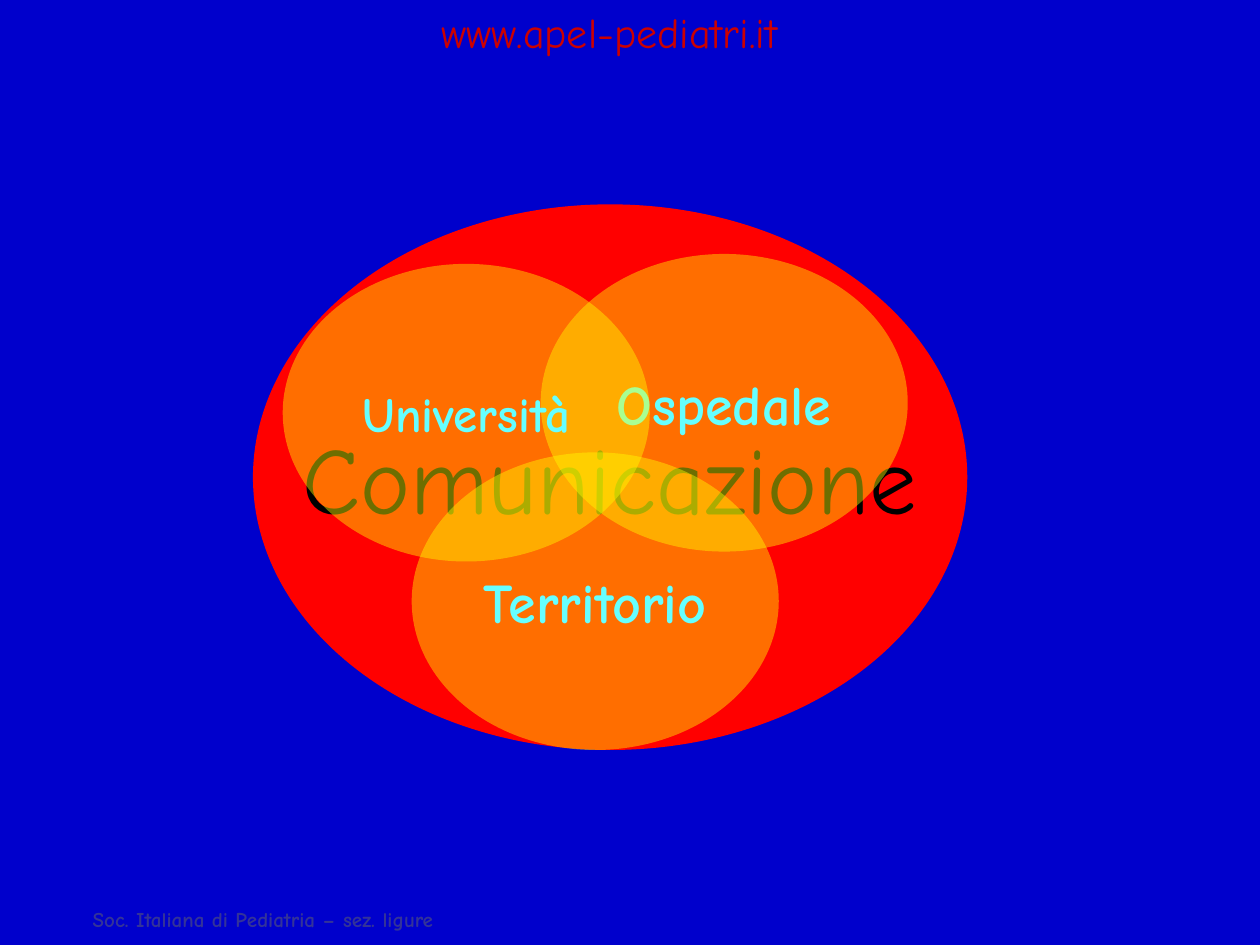
from dataclasses import dataclass

from lxml import etree
from pptx import Presentation
from pptx.dml.color import RGBColor
from pptx.enum import shapes, text
from pptx.oxml import ns
from pptx.util import Cm, Pt

BLUE = RGBColor(0x00, 0x00, 0xCC)
RED = RGBColor(0xFF, 0x00, 0x00)
DARK_RED = RGBColor(0xCC, 0x00, 0x00)
YELLOW = RGBColor(0xFF, 0xFF, 0x00)
CYAN = RGBColor(0x66, 0xFF, 0xFF)
INDIGO = RGBColor(0x33, 0x33, 0x99)
BLACK = RGBColor(0x00, 0x00, 0x00)
FONT = "Comic Neue"
CIRCLE_W, CIRCLE_H = 7.4, 6.0


@dataclass
class Ellipse:
    label: str
    left: float
    top: float
    size: int
    width: float = CIRCLE_W
    height: float = CIRCLE_H
    fill: RGBColor = YELLOW
    color: RGBColor = CYAN
    bold: bool = True
    opacity: int = 43


ELLIPSES = [
    Ellipse("Comunicazione", 5.1, 4.12, 54, 14.4, 11.0, RED, BLACK, False, 100),
    Ellipse("Ospedale", 10.9, 5.12, 32),
    Ellipse("Territorio", 8.3, 9.12, 32),
    Ellipse("Università", 5.7, 5.32, 28),
]


def write(tf, content: str, *, size: int, color: RGBColor, bold: bool = False,
          align=text.PP_ALIGN.CENTER, anchor=text.MSO_ANCHOR.TOP, wrap: bool = False) -> None:
    tf.word_wrap = wrap
    tf.vertical_anchor = anchor
    p = tf.paragraphs[0]
    p.alignment = align
    r = p.add_run()
    r.text = content
    r.font.name = FONT
    r.font.size = Pt(size)
    r.font.bold = bold
    r.font.color.rgb = color


def draw_ellipse(s, e: Ellipse) -> None:
    sp = s.shapes.add_shape(shapes.MSO_SHAPE.OVAL, Cm(e.left), Cm(e.top), Cm(e.width), Cm(e.height))
    sp.shadow.inherit = False
    sp.line.fill.background()
    sp.fill.solid()
    sp.fill.fore_color.rgb = e.fill
    if e.opacity < 100:
        clr = sp._element.spPr.find(ns.qn("a:solidFill")).find(ns.qn("a:srgbClr"))
        etree.SubElement(clr, ns.qn("a:alpha"), val=str(e.opacity * 1000))
    write(sp.text_frame, e.label, size=e.size, color=e.color, bold=e.bold,
          anchor=text.MSO_ANCHOR.MIDDLE)


def main() -> None:
    prs = Presentation()
    prs.slide_width, prs.slide_height = Cm(25.4), Cm(19.05)
    s = prs.slides.add_slide(prs.slide_layouts[6])
    s.background.fill.solid()
    s.background.fill.fore_color.rgb = BLUE

    footer = s.shapes.add_textbox(Cm(1.62), Cm(18.16), Cm(9.3), Cm(0.85))
    write(footer.text_frame, "Soc. Italiana di Pediatria – sez. ligure", size=12,
          color=INDIGO, bold=True, align=text.PP_ALIGN.LEFT, wrap=True)
    website = s.shapes.add_textbox(Cm(8.1), Cm(0), Cm(8.36), Cm(1.27))
    write(website.text_frame, "www.apel-pediatri.it", size=24, color=DARK_RED)

    for e in ELLIPSES:
        draw_ellipse(s, e)
    prs.save("out.pptx")


if __name__ == "__main__":
    main()
